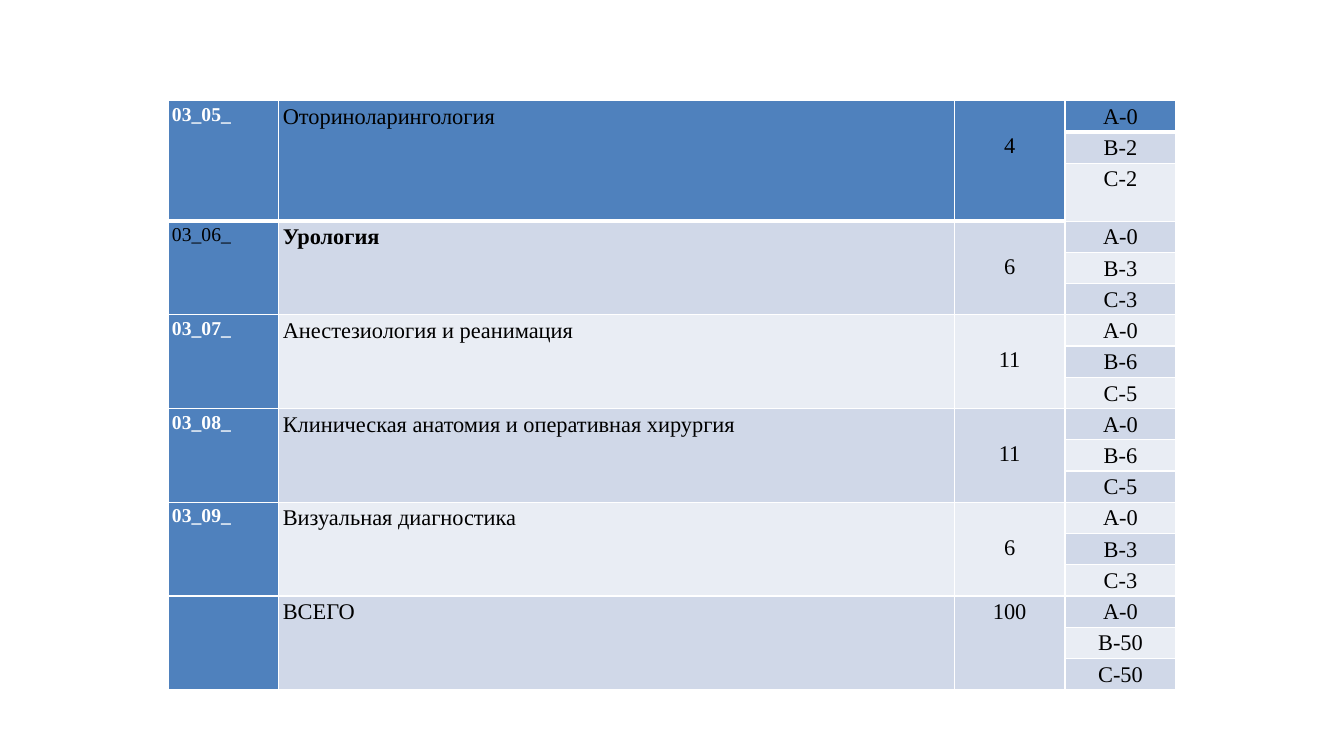
from lxml.etree import SubElement
from pptx import Presentation
from pptx.dml.color import RGBColor
from pptx.enum.text import PP_ALIGN
from pptx.oxml.ns import qn
from pptx.util import Inches, Pt

FONT = "Times New Roman"
ACCENT, BAND_DARK, BAND_LIGHT = "4F81BD", "D0D8E8", "E9EDF4"
BLACK, WHITE = "000000", "FFFFFF"
LEVELS = "АВС"
COLUMN_SHARES = (0.11, 0.67, 0.11, 0.11)
ROW_HEIGHT, TALL_ROW_HEIGHT, TALL_ROW = 0.31, 0.56, 2
LINE_HEIGHT = 0.29

# code, discipline, total, questions per level
DISCIPLINES = [
    ("03_05_", "Оториноларингология", 4, (0, 2, 2)),
    ("03_06_", "Урология", 6, (0, 3, 3)),
    ("03_07_", "Анестезиология и реанимация", 11, (0, 6, 5)),
    ("03_08_", "Клиническая анатомия и оперативная хирургия", 11, (0, 6, 5)),
    ("03_09_", "Визуальная диагностика", 6, (0, 3, 3)),
    ("", "ВСЕГО", 100, (0, 50, 50)),
]
HIGHLIGHTED = "Урология"


def color(hex_code):
    return RGBColor.from_string(hex_code)


def band(row):
    if row == 0:
        return ACCENT
    return BAND_DARK if row % 2 else BAND_LIGHT


def set_borders(cell, bottom_width=1):
    properties = cell._tc.get_or_add_tcPr()
    for position, side in enumerate(("lnL", "lnR", "lnT", "lnB")):
        width = bottom_width if side == "lnB" else 1
        line = properties.makeelement(qn(f"a:{side}"), {"w": str(Pt(width))})
        properties.insert(position, line)
        fill = SubElement(line, qn("a:solidFill"))
        SubElement(fill, qn("a:srgbClr"), val=WHITE)


def style_cell(cell, fill, bottom_width=1):
    cell.margin_left = cell.margin_right = Inches(0.04)
    cell.margin_top = cell.margin_bottom = 0
    cell.fill.solid()
    cell.fill.fore_color.rgb = color(fill)
    set_borders(cell, bottom_width)


def write(cell, text, size=16, ink=BLACK, bold=False, align=PP_ALIGN.LEFT):
    paragraph = cell.text_frame.paragraphs[0]
    paragraph.alignment = align
    paragraph.line_spacing = 1.15
    run = paragraph.add_run()
    run.text = text
    run.font.name = FONT
    run.font.size = Pt(size)
    run.font.bold = bold
    run.font.color.rgb = color(ink)


def fill_discipline(table, first_row, code, discipline, total, counts):
    last_row = first_row + len(LEVELS) - 1
    highlighted = discipline == HIGHLIGHTED
    bottom_width = 3 if first_row == 0 else 1

    # Cells spanning the three levels
    for column in range(3):
        fill = ACCENT if column == 0 else band(first_row)
        for row in range(first_row, last_row + 1):
            style_cell(table.cell(row, column), fill, bottom_width)
        table.cell(first_row, column).merge(table.cell(last_row, column))
    code_cell, name_cell, total_cell = (table.cell(first_row, c) for c in range(3))
    if code:
        write(code_cell, code, 14, BLACK if highlighted else WHITE, not highlighted)
        total_cell.margin_top = Inches(LINE_HEIGHT)
    write(name_cell, discipline, bold=highlighted)
    write(total_cell, str(total), align=PP_ALIGN.CENTER)

    # Level breakdown
    for row, (level, count) in enumerate(zip(LEVELS, counts), first_row):
        level_cell = table.cell(row, 3)
        style_cell(level_cell, band(row), 3 if row == 0 else 1)
        write(level_cell, f"{level}-{count}", align=PP_ALIGN.CENTER)


def add_discipline_table(slide, left, top, width):
    row_count = len(DISCIPLINES) * len(LEVELS)
    height = Inches(ROW_HEIGHT * (row_count - 1) + TALL_ROW_HEIGHT)
    table = slide.shapes.add_table(
        row_count, len(COLUMN_SHARES), left, top, width, height).table
    table.first_row = table.horz_banding = False
    for column, share in zip(table.columns, COLUMN_SHARES):
        column.width = int(width * share)
    for index, row in enumerate(table.rows):
        row.height = Inches(TALL_ROW_HEIGHT if index == TALL_ROW else ROW_HEIGHT)
    for index, discipline in enumerate(DISCIPLINES):
        fill_discipline(table, index * len(LEVELS), *discipline)


def main():
    deck = Presentation()
    deck.slide_width, deck.slide_height = Inches(13.33), Inches(7.5)
    slide = deck.slides.add_slide(deck.slide_layouts[6])
    add_discipline_table(slide, deck.slide_width // 8, Inches(1),
                         deck.slide_width * 3 // 4)
    deck.save("out.pptx")


if __name__ == "__main__":
    main()
